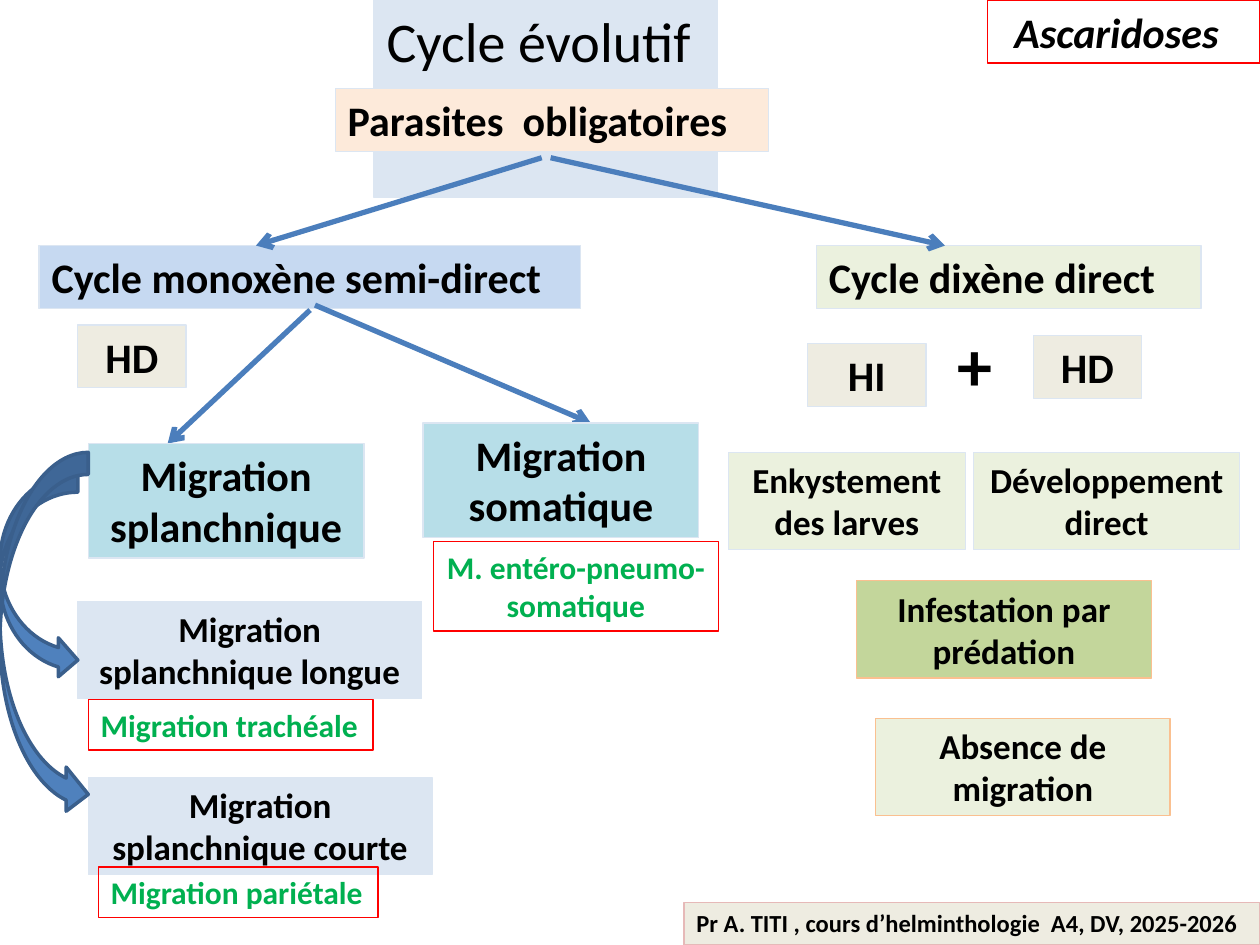
"""Build the slide on the life cycle of ascarids."""
from dataclasses import dataclass

from pptx import Presentation
from pptx import util as u
from pptx.dml.color import RGBColor
from pptx.enum import shapes, text
from pptx.oxml import parse_xml
from pptx.oxml.ns import nsdecls, qn


@dataclass(frozen=True)
class Theme:
    font: str = "Calibri"
    ink: str = "000000"
    accent: str = "00B050"
    red: str = "FF0000"
    pale: str = "DCE6F2"
    blue: str = "C6D9F1"
    teal: str = "B7DEE8"
    peach: str = "FDEADA"
    sand: str = "EEECE1"
    mist: str = "EBF1DE"
    green: str = "C3D69B"
    orange: str = "FAC090"
    rose: str = "E6B9B8"
    link: str = "4B7EBC"
    arrow: str = "4F81BD"
    arrow_edge: str = "3A5F8C"
    title: int = 32
    head: int = 24
    body: int = 20
    note: int = 18
    small: int = 14
    sign: int = 40


def rgb(value):
    return RGBColor.from_string(value)


def write(tf, content, *, font, size, color, bold=True, italic=False, center=False, wrap=True):
    tf.word_wrap = wrap
    tf.auto_size = text.MSO_AUTO_SIZE.SHAPE_TO_FIT_TEXT
    tf.vertical_anchor = text.MSO_ANCHOR.TOP
    for i, line in enumerate(content.split("\n")):
        p = tf.paragraphs[0] if i == 0 else tf.add_paragraph()
        p.alignment = text.PP_ALIGN.CENTER if center else text.PP_ALIGN.LEFT
        r = p.add_run()
        r.text = line
        f = r.font
        f.name, f.size, f.bold, f.italic = font, u.Pt(size), bold, italic
        f.color.rgb = rgb(color)


class Deck:
    def __init__(self, prs, theme):
        self.t = theme
        self.s = prs.slides.add_slide(prs.slide_layouts[5])

    def paint(self, sp, fill, line, width=0.75):
        if fill:
            sp.fill.solid()
            sp.fill.fore_color.rgb = rgb(fill)
        else:
            sp.fill.background()
        if line:
            sp.line.color.rgb = rgb(line)
            sp.line.width = u.Pt(width)
        else:
            sp.line.fill.background()

    def title(self, content, at, fill):
        sp = self.s.shapes.title
        sp.left, sp.top, sp.width, sp.height = map(u.Cm, at)
        self.paint(sp, fill, fill)
        write(sp.text_frame, content, font=self.t.font, size=self.t.title,
              color=self.t.ink, bold=False)

    def shape(self, kind, at, fill, line, width=0.75):
        sp = self.s.shapes.add_shape(kind, *map(u.Cm, at))
        sp.shadow.inherit = False
        self.paint(sp, fill, line, width)
        return sp

    def box(self, content, at, fill, line, size, color=None, inset=0.25, **fmt):
        sp = self.shape(shapes.MSO_SHAPE.RECTANGLE, at, fill, line)
        sp.text_frame.margin_left = u.Cm(inset)
        write(sp.text_frame, content, font=self.t.font, size=size,
              color=color or self.t.ink, **fmt)

    def note(self, content, at, **fmt):
        self.box(content, at, None, self.t.red, self.t.note, self.t.accent, wrap=False, **fmt)

    def text(self, content, at, size):
        sp = self.s.shapes.add_textbox(*map(u.Cm, at))
        write(sp.text_frame, content, font=self.t.font, size=size, color=self.t.ink)

    def link(self, *ends):
        sp = self.s.shapes.add_connector(shapes.MSO_CONNECTOR.STRAIGHT, *map(u.Cm, ends))
        sp.line.color.rgb = rgb(self.t.link)
        sp.line.width = u.Pt(3)
        sp.line._get_or_add_ln().append(parse_xml(f'<a:tailEnd {nsdecls("a")} type="arrow"/>'))
        sp._element.spPr.append(sp._element.makeelement(qn("a:effectLst"), {}))

    def curve(self, at):
        self.shape(shapes.MSO_SHAPE.CURVED_RIGHT_ARROW, at, self.t.arrow, self.t.arrow_edge, 2)


def main():
    prs = Presentation()
    prs.slide_width, prs.slide_height = u.Cm(25.4), u.Cm(19.05)
    t = Theme()
    d = Deck(prs, t)
    one, two, tall = 1.27, 1.96, 2.31

    d.title("Cycle évolutif", (7.54, 0, 6.93, 1.63), t.pale)
    d.box("Ascaridoses", (19.91, 0, 5.49, one), None, t.red, t.head, italic=True, inset=0.54)
    for content, x, y, w, fill in (
        ("Parasites  obligatoires", 6.76, 1.78, 8.74, t.peach),
        ("Cycle dixène direct", 16.46, 4.95, 7.75, t.mist),
        ("Cycle monoxène semi-direct", 0.79, 4.95, 10.92, t.blue),
    ):
        d.box(content, (x, y, w, one), fill, t.pale, t.head)

    for ends in (
        (10.92, 3.18, 5.16, 4.95),
        (11.1, 3.18, 19.05, 4.95),
        (6.25, 6.25, 3.38, 8.94),
        (6.35, 6.15, 11.91, 8.53),
    ):
        d.link(*ends)

    for content, x, y, w, h, fill, line, size in (
        ("Migration splanchnique longue", 1.57, 12.12, 6.93, two, t.pale, t.pale, t.body),
        ("Migration splanchnique courte", 1.78, 15.67, 6.93, two, t.pale, t.pale, t.body),
        ("Migration splanchnique", 1.78, 8.94, 5.56, tall, t.teal, t.pale, t.head),
        ("Migration somatique", 8.53, 8.53, 5.56, tall, t.teal, t.pale, t.head),
        ("HD", 1.57, 6.55, 2.18, one, t.sand, t.pale, t.head),
        ("HI", 16.28, 6.93, 2.39, one, t.sand, t.pale, t.head),
        ("HD", 20.83, 6.76, 2.18, one, t.sand, t.pale, t.head),
        ("Enkystement des larves", 14.68, 9.12, 4.78, two, t.mist, t.pale, t.body),
        ("Développement direct", 19.63, 9.12, 5.36, two, t.mist, t.pale, t.body),
        ("Infestation par prédation", 17.27, 11.71, 5.94, two, t.green, t.orange, t.body),
        ("Absence de migration", 17.65, 14.48, 5.94, two, t.mist, t.orange, t.body),
    ):
        d.box(content, (x, y, w, h), fill, line, size, center=True)

    d.curve((0, 9.53, 1.57, 4.17))
    d.curve((0, 9.12, 1.78, 7.34))
    d.note("M. entéro-pneumo-\nsomatique", (8.74, 10.92, 5.74, 1.8), center=True)
    d.note("Migration trachéale", (1.78, 14.1, 5.74, 1.02))
    d.note("Migration pariétale", (1.98, 17.48, 5.64, 1.02))
    d.text("+", (19.05, 6.35, 0.99, two), t.sign)
    d.box("Pr A. TITI , cours d’helminthologie  A4, DV, 2025-2026",
          (13.79, 18.19, 11.61, 0.86), t.sand, t.rose, t.small)

    prs.save("out.pptx")


if __name__ == "__main__":
    main()
